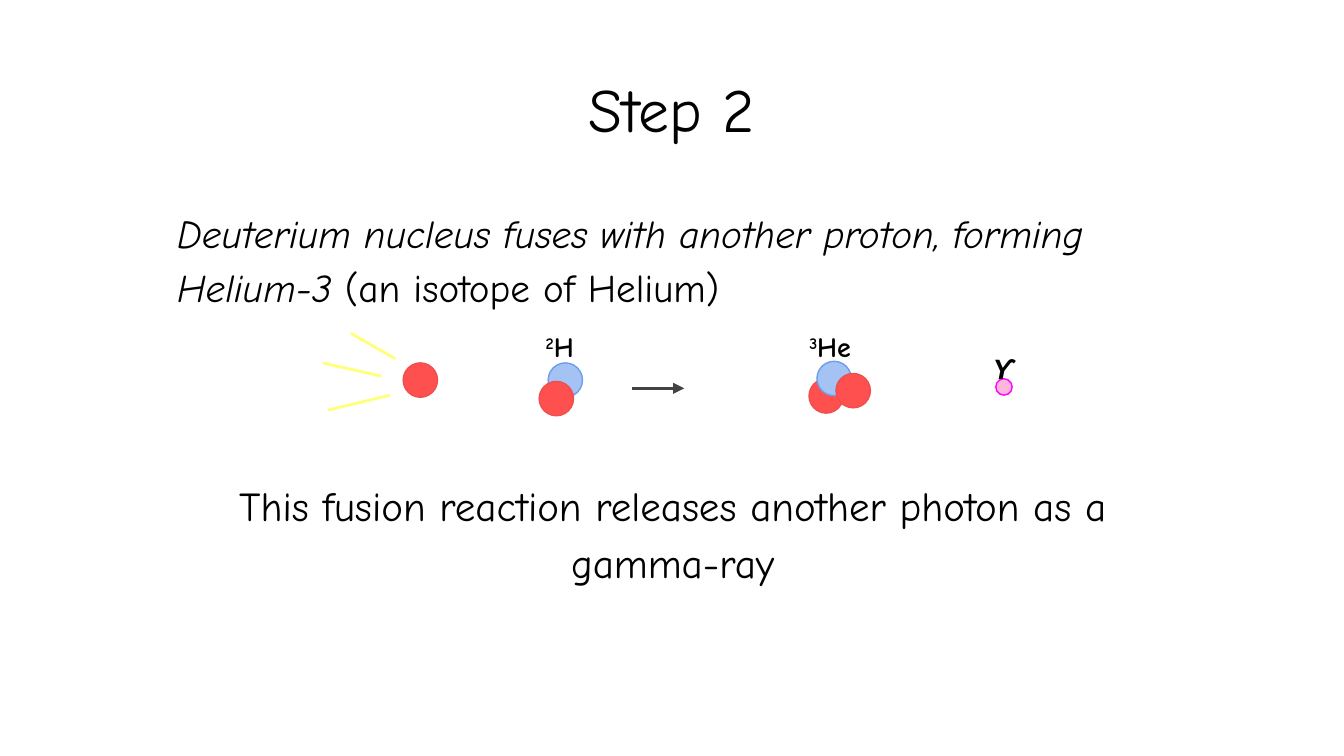
from pptx import Presentation
from pptx.dml.color import RGBColor
from pptx.enum.shapes import MSO_CONNECTOR as Connector, MSO_SHAPE as Shape
from pptx.enum.text import MSO_AUTO_SIZE as AutoSize, PP_ALIGN as Align
from pptx.oxml.ns import qn
from pptx.util import Cm, Pt
from lxml.etree import SubElement

PROTON = ("FF5050", "EE4E4E")
NEUTRON = ("A4C2F4", "6D9EEB")
PHOTON = ("FFB6DA", "FF00FF")
NUCLEON_SIZE = 0.65


def color(value):
    return RGBColor.from_string(value)


def add_span(para, text, size=21, font="Comic Neue", bold=False, italic=False, raised=False):
    span = para.add_run()
    span.text = text
    span.font.name = font
    span.font.size = Pt(size)
    span.font.bold = bold
    span.font.italic = italic
    span.font.color.rgb = color("000000")
    if raised:
        span.font._element.set("baseline", "30000")


class SlideBuilder:
    line_spacing = 1.15
    inset = Cm(0.25)

    def __init__(self, page):
        self.page = page

    def text_box(self, left, top, width, height):
        box = self.page.shapes.add_textbox(Cm(left), Cm(top), Cm(width), Cm(height))
        frame = box.text_frame
        frame.word_wrap = True
        frame.auto_size = AutoSize.NONE
        frame.margin_left = frame.margin_right = self.inset
        frame.margin_top = frame.margin_bottom = self.inset
        return frame

    def style_para(self, para, align=Align.LEFT, before=0):
        para.alignment = align
        para.line_spacing = self.line_spacing
        para.space_before = Pt(before)
        return para

    def isotope_label(self, left, mass, symbol):
        frame = self.text_box(left, 5.89, 1.4, 1.2)
        para = self.style_para(frame.paragraphs[0], Align.CENTER)
        add_span(para, mass, size=15, bold=True, raised=True)
        add_span(para, symbol, size=15, bold=True)

    def particle(self, left, top, kind, size=NUCLEON_SIZE):
        fill, outline = kind
        ball = self.page.shapes.add_shape(Shape.OVAL, Cm(left), Cm(top), Cm(size), Cm(size))
        ball.shadow.inherit = False
        ball.fill.solid()
        ball.fill.fore_color.rgb = color(fill)
        ball.line.color.rgb = color(outline)
        ball.line.width = Pt(0.75)

    def line(self, start, end, stroke, arrow=False):
        ends = [Cm(value) for value in (*start, *end)]
        link = self.page.shapes.add_connector(Connector.STRAIGHT, *ends)
        link.line.color.rgb = color(stroke)
        link.line.width = Pt(1.5)
        if arrow:
            SubElement(link.line._get_or_add_ln(), qn("a:tailEnd"), type="triangle")
        SubElement(link._element.spPr, qn("a:effectLst"))


def main():
    deck = Presentation()
    deck.slide_width, deck.slide_height = Cm(25.4), Cm(14.29)
    builder = SlideBuilder(deck.slides.add_slide(deck.slide_layouts[6]))

    body = builder.text_box(3.1, 3.58, 19.23, 6.6)
    reaction = builder.style_para(body.paragraphs[0])
    add_span(reaction, "Deuterium nucleus fuses with another proton, forming Helium-3", italic=True)
    add_span(reaction, " (an isotope of Helium)")
    release = builder.style_para(body.add_paragraph(), Align.CENTER, before=87)
    add_span(release, "This fusion reaction releases another photon as a gamma-ray", size=22)

    title = builder.text_box(0, 0.89, 25.4, 1.93)
    add_span(builder.style_para(title.paragraphs[0], Align.CENTER), "Step 2", size=33)

    builder.isotope_label(9.88, "2", "H")
    builder.isotope_label(14.99, "3", "He")

    for left, top, kind in (
        (7.62, 6.86, PROTON),
        (10.36, 6.86, NEUTRON),
        (10.19, 7.21, PROTON),
        (15.29, 7.16, PROTON),
        (15.44, 6.83, NEUTRON),
        (15.8, 7.06, PROTON),
    ):
        builder.particle(left, top, kind)
    builder.particle(18.82, 7.16, PHOTON, size=0.31)

    for start, end in (
        ((7.37, 7.47), (6.2, 7.75)),
        ((7.21, 7.11), (6.1, 6.86)),
        ((7.47, 6.78), (6.63, 6.3)),
    ):
        builder.line(start, end, "FFFF7A")
    builder.line((11.94, 7.34), (12.93, 7.34), "434343", arrow=True)

    gamma = builder.text_box(18.52, 6.3, 1.12, 1.14)
    add_span(builder.style_para(gamma.paragraphs[0]), "ϒ", size=15, font="Arial", bold=True, italic=True)

    deck.save("out.pptx")


if __name__ == "__main__":
    main()
